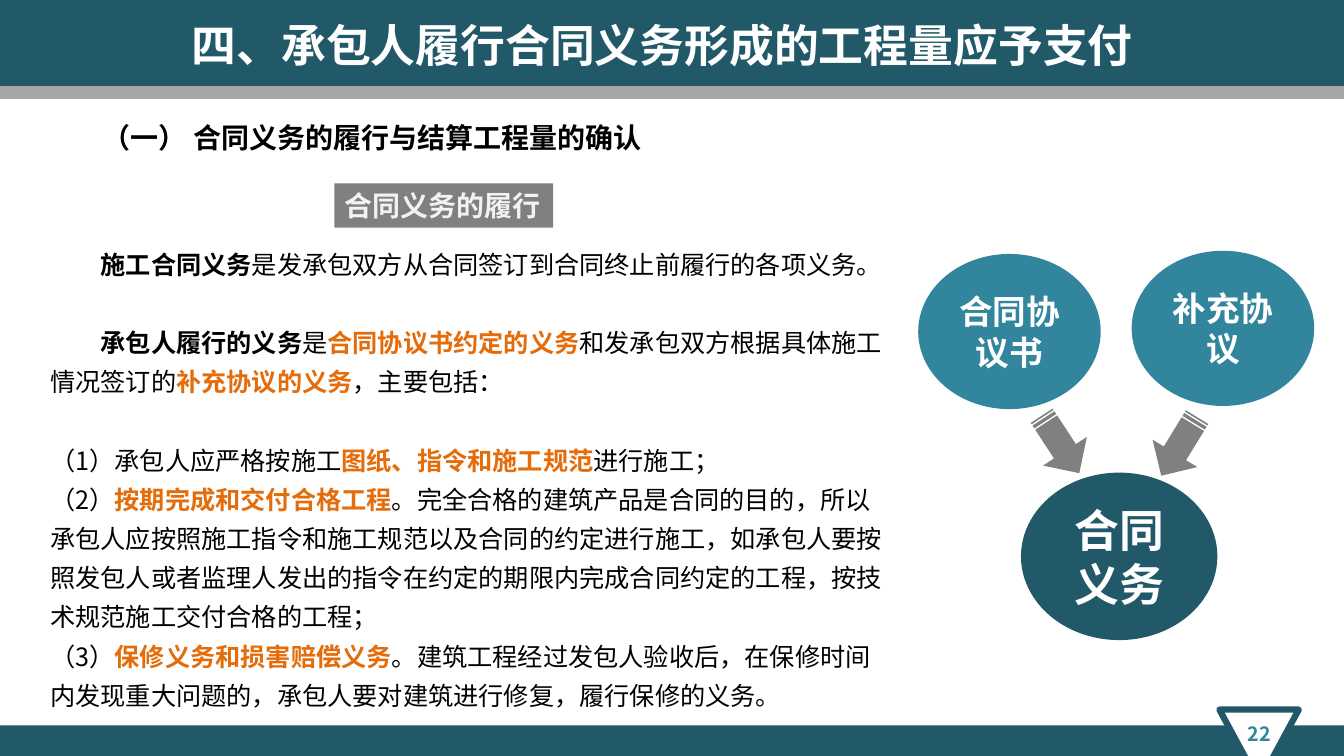
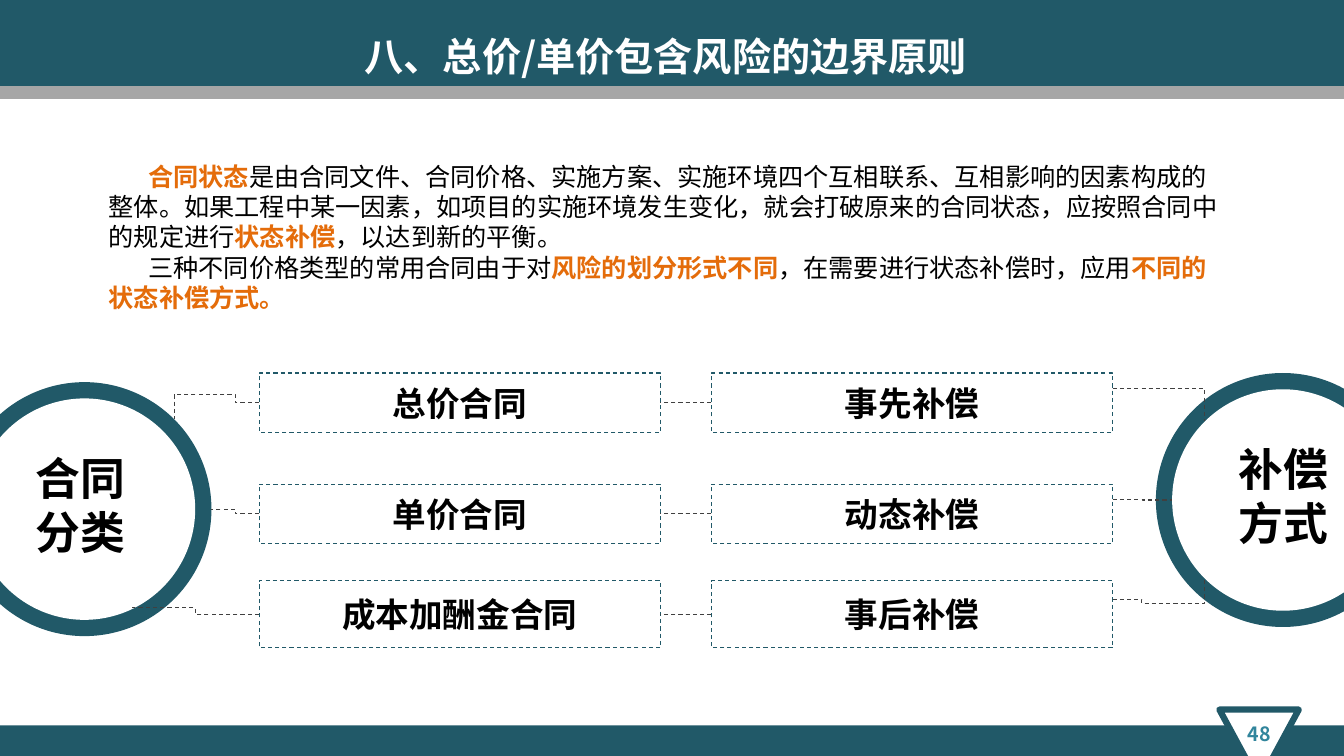
from pptx import Presentation
from pptx.dml.color import RGBColor
from pptx.enum.dml import MSO_LINE
from pptx.enum.shapes import MSO_CONNECTOR, MSO_SHAPE
from pptx.enum.text import MSO_ANCHOR, PP_ALIGN
from pptx.oxml.ns import qn
from pptx.util import Cm, Pt
from lxml import etree

RECT = MSO_SHAPE.RECTANGLE
OVAL = MSO_SHAPE.OVAL
TRIANGLE = MSO_SHAPE.ISOSCELES_TRIANGLE
STRIPED_ARROW = MSO_SHAPE.STRIPED_RIGHT_ARROW
STRAIGHT = MSO_CONNECTOR.STRAIGHT
ELBOW = MSO_CONNECTOR.ELBOW
DASH = MSO_LINE.DASH
LEFT, CENTER = PP_ALIGN.LEFT, PP_ALIGN.CENTER
TOP, MIDDLE = MSO_ANCHOR.TOP, MSO_ANCHOR.MIDDLE

FONT = "Noto Sans CJK SC"
WIDTH, HEIGHT = 33.87, 19.05
DARK_TEAL, TEAL, ORANGE = "215968", "31859C", "E46C0A"
BLACK, WHITE, OFF_WHITE = "000000", "FFFFFF", "F2F2F2"
GRAY, LIGHT_GRAY, CHARCOAL = "808080", "A6A6A6", "404040"

# Run styles: colour, bold
PLAIN, STRONG, ACCENT = (BLACK, False), (BLACK, True), (ORANGE, True)


def rgb(value):
    return RGBColor.from_string(value)


def style_run(run, size, color, bold=True):
    run.font.name = FONT
    run.font.size = Pt(size)
    run.font.bold = bold
    run.font.color.rgb = rgb(color)
    east_asian = etree.SubElement(run.font._element, qn("a:ea"))
    east_asian.set("typeface", FONT)


def set_text(shape, text, size, color, align=CENTER, anchor=MIDDLE):
    """Fill a shape with one bold paragraph."""
    frame = shape.text_frame
    frame.word_wrap = True
    frame.vertical_anchor = anchor
    frame.text = text
    paragraph = frame.paragraphs[0]
    paragraph.alignment = align
    style_run(paragraph.runs[0], size, color)
    return paragraph


def add_block(slide, kind, box, fill, line=None, width=0.75, dash=None):
    """Add a preset shape; box is left, top, width, height in cm."""
    shape = slide.shapes.add_shape(kind, *map(Cm, box))
    shape.shadow.inherit = False
    shape.fill.solid()
    shape.fill.fore_color.rgb = rgb(fill)
    if line:
        shape.line.color.rgb = rgb(line)
        shape.line.width = Pt(width)
        shape.line.dash_style = dash
    else:
        shape.line.fill.background()
    return shape


def add_label(slide, box, text, size, color, align=LEFT):
    label = slide.shapes.add_textbox(*map(Cm, box))
    return set_text(label, text, size, color, align, TOP)


def add_body(slide, box, paragraphs, size=18):
    """Add paragraphs given as (indent in cm, space before in pt, line spacing, runs)."""
    frame = slide.shapes.add_textbox(*map(Cm, box)).text_frame
    frame.word_wrap = True
    for number, (indent, before, spacing, pieces) in enumerate(paragraphs):
        paragraph = frame.add_paragraph() if number else frame.paragraphs[0]
        paragraph.space_before = Pt(before)
        paragraph.line_spacing = spacing
        properties = paragraph._p.get_or_add_pPr()
        properties.set("marL", "0")
        properties.set("indent", str(int(Cm(indent))))
        for text, (color, bold) in pieces:
            run = paragraph.add_run()
            run.text = text
            style_run(run, size, color, bold)


def add_line(slide, kind, start, end, color, width, dash=None):
    line = slide.shapes.add_connector(kind, *map(Cm, start + end))
    line.line.color.rgb = rgb(color)
    line.line.width = Pt(width)
    line.line.dash_style = dash
    etree.SubElement(line._element.spPr, qn("a:effectLst"))
    return line


def add_bent_link(slide, start, end, preset="bentConnector3", bends=()):
    """Add a dashed elbow; bends are its adjustments as shares of its size."""
    link = add_line(slide, ELBOW, start, end, CHARCOAL, 0.75, DASH)
    geometry = link._element.spPr.find(qn("a:prstGeom"))
    geometry.set("prst", preset)
    guides = geometry.find(qn("a:avLst"))
    for number, share in enumerate(bends, 1):
        guide = etree.SubElement(guides, qn("a:gd"))
        guide.set("name", f"adj{number}")
        guide.set("fmla", f"val {round(share * 100000)}")
    return link


def add_ring(slide, left, top, text, text_left):
    diameter, band = 6.4, 0.41
    inner = diameter - 2 * band
    add_block(slide, OVAL, (left, top, diameter, diameter), DARK_TEAL)
    add_block(slide, OVAL, (left + band, top + band, inner, inner), WHITE)
    add_label(slide, (text_left, top + 1.61, 3, 3), text, 32, BLACK, CENTER)


def add_framed_slide(deck, page):
    """Add a blank slide with the shared bands and page badge."""
    slide = deck.slides.add_slide(deck.slide_layouts[6])
    add_block(slide, RECT, (0, 0, WIDTH, 2.26), DARK_TEAL)
    add_block(slide, RECT, (0, 18.28, WIDTH, 0.77), DARK_TEAL)
    add_line(slide, STRAIGHT, (WIDTH, 2.33), (0, 2.33), LIGHT_GRAY, 8.75)
    badge = add_block(slide, TRIANGLE, (30.73, 17.88, 2, 1.85), WHITE, DARK_TEAL, 4.5)
    badge.rotation = 180
    add_label(slide, (31.13, 18.06, 1.2, 0.86), page, 14, TEAL, CENTER)
    return slide


def build_duties(deck):
    slide = add_framed_slide(deck, "22")
    spacing = Pt(28)
    add_body(slide, (1.02, 5.92, 21.59, 11.23), [
        (1.27, 0, spacing, [
            ("施工合同义务", STRONG),
            ("是发承包双方从合同签订到合同终止前履行的各项义务。", PLAIN)]),
        (1.27, 28, spacing, [
            ("承包人履行的义务", STRONG),
            ("是", PLAIN),
            ("合同协议书约定的义务", ACCENT),
            ("和发承包双方根据具体施工情况签订的", PLAIN),
            ("补充协议的义务", ACCENT),
            ("，主要包括：", PLAIN)]),
        (0, 28, spacing, [
            ("（1）承包人应严格按施工", PLAIN),
            ("图纸、指令和施工规范", ACCENT),
            ("进行施工；", PLAIN)]),
        (0, 0, spacing, [
            ("（2）", PLAIN),
            ("按期完成和交付合格工程", ACCENT),
            ("。完全合格的建筑产品是合同的目的，所以承包人应按照施工指令和施工规范"
             "以及合同的约定进行施工，如承包人要按照发包人或者监理人发出的指令在约定的"
             "期限内完成合同约定的工程，按技术规范施工交付合格的工程；", PLAIN)]),
        (0, 0, spacing, [
            ("（3）", PLAIN),
            ("保修义务和损害赔偿义务", ACCENT),
            ("。建筑工程经过发包人验收后，在保修时间内发现重大问题的，"
             "承包人要对建筑进行修复，履行保修的义务。", PLAIN)]),
    ])
    add_label(slide, (4.58, 0.33, 25.57, 1.63),
              "四、承包人履行合同义务形成的工程量应予支付", 32, WHITE)
    add_label(slide, (2.34, 2.92, 23.95, 1.12),
              "（一） 合同义务的履行与结算工程量的确认", 20, BLACK)

    for box, fill, text, size in (
        ((25.73, 11.91, 4.95, 4.22), DARK_TEAL, "合同义务", 32),
        ((23.14, 6.4, 4.6, 3.91), TEAL, "合同协议书", 24),
        ((28.52, 6.32, 4.6, 3.91), TEAL, "补充协议", 24),
    ):
        set_text(add_block(slide, OVAL, box, fill), text, size, WHITE)

    for left, top, angle in ((25.86, 10.54, 56.8), (28.85, 10.59, 121.5)):
        arrow = add_block(slide, STRIPED_ARROW, (left, top, 1.73, 1.32), GRAY)
        arrow.rotation = angle

    heading = add_block(slide, RECT, (8.43, 4.62, 5.51, 1.12), GRAY)
    set_text(heading, "合同义务的履行", 20, OFF_WHITE, LEFT)
    heading.text_frame.word_wrap = False


def build_compensation(deck):
    slide = add_framed_slide(deck, "48")
    add_body(slide, (2.49, 3.94, 28.47, 4.11), [
        (1, 0, 1.0, [
            ("合同状态", ACCENT),
            ("是由合同文件、合同价格、实施方案、实施环境四个互相联系、互相影响的因素"
             "构成的整体。如果工程中某一因素，如项目的实施环境发生变化，就会打破原来的"
             "合同状态，应按照合同中的规定进行", PLAIN),
            ("状态补偿", ACCENT),
            ("，以达到新的平衡。", PLAIN)]),
        (1, 0, 1.0, [
            ("三种不同价格类型的常用合同由于对", PLAIN),
            ("风险的划分形式不同", ACCENT),
            ("，在需要进行状态补偿时，应用", PLAIN),
            ("不同的状态补偿方式。", ACCENT)]),
    ])
    add_ring(slide, -1.07, 9.63, "合同分类", 0.53)
    add_ring(slide, 29.13, 9.4, "补偿方式", 30.84)

    contract_left, remedy_left, box_width = 6.53, 17.93, 10.11
    rows = (
        (9.4, 1.5, "总价合同", "事先补偿",
         ((4.39, 10.57), "bentConnector4", (0.28, -0.52)),
         ((30.35, 10.62), "bentConnector2", ())),
        (12.2, 1.5, "单价合同", "动态补偿",
         ((5.33, 12.83), "bentConnector3", ()),
         ((29.54, 12.6), "bentConnector3", ())),
        (14.63, 1.7, "成本加酬金合同", "事后补偿",
         ((3.33, 15.32), "bentConnector3", ()),
         ((30.35, 14.58), "bentConnector4", (0.32, -0.2))),
    )
    for top, height, contract, remedy, left_link, right_link in rows:
        contract_box, remedy_box = (
            add_block(slide, RECT, (left, top, box_width, height), WHITE, DARK_TEAL, dash=DASH)
            for left in (contract_left, remedy_left))
        set_text(contract_box, contract, 24, BLACK)
        set_text(remedy_box, remedy, 24, BLACK)

        middle = top + height / 2
        add_bent_link(slide, (contract_left, middle), *left_link)
        add_bent_link(slide, (remedy_left + box_width, middle - 0.37), *right_link)
        pair_link = add_bent_link(slide, (remedy_left, middle),
                                  (contract_left + box_width, middle))
        pair_link.begin_connect(remedy_box, 1)
        pair_link.end_connect(contract_box, 3)

    title = add_label(slide, (8.94, 0.53, 16.61, 1.6),
                      "八、总价/单价包含风险的边界原则", 28, WHITE)
    title.line_spacing = Pt(38)


def main():
    deck = Presentation()
    deck.slide_width, deck.slide_height = Cm(WIDTH), Cm(HEIGHT)
    build_duties(deck)
    build_compensation(deck)
    deck.save("out.pptx")


if __name__ == "__main__":
    main()
